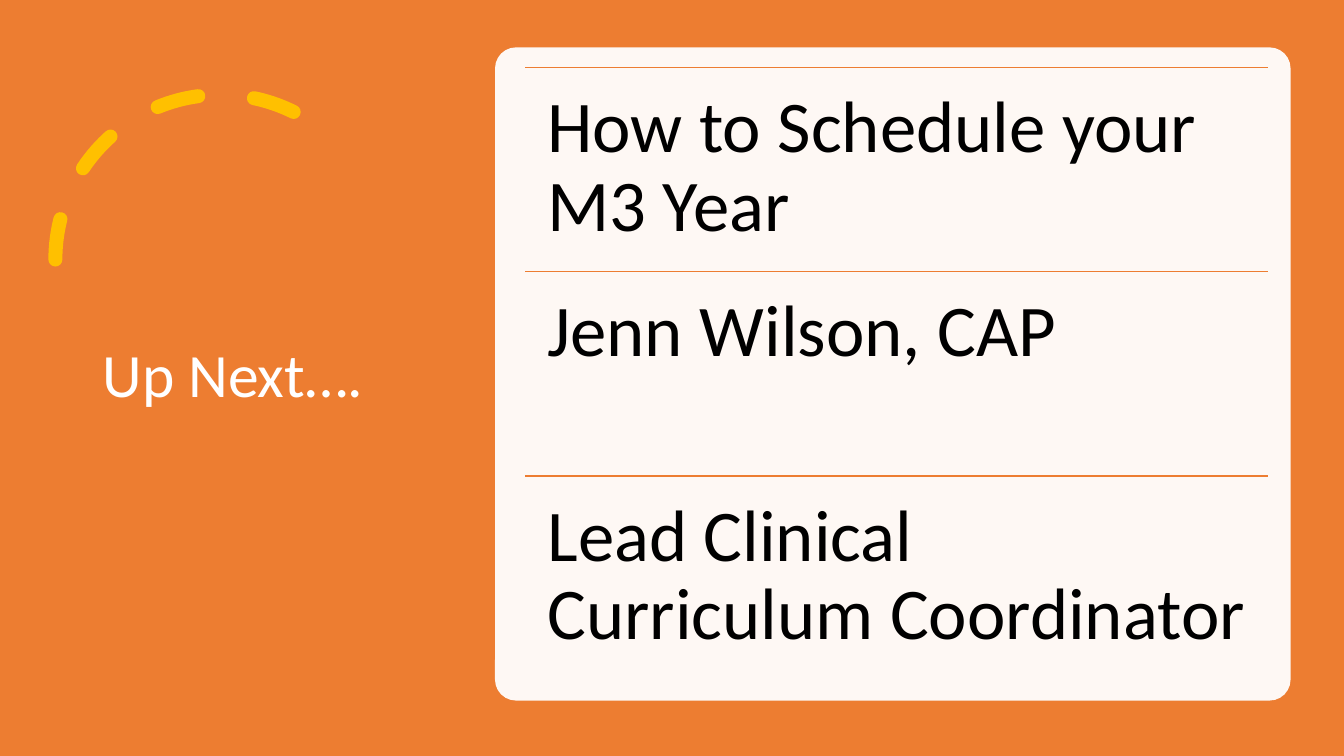
from dataclasses import dataclass
from lxml.etree import SubElement
from pptx import Presentation
from pptx.dml.color import RGBColor as RGB
from pptx.enum.dml import MSO_LINE as Dash
from pptx.enum.shapes import MSO_CONNECTOR as Conn, MSO_SHAPE as Kind
from pptx.enum.text import MSO_ANCHOR as Anchor
from pptx.oxml.ns import qn
from pptx.util import Inches, Pt


@dataclass(frozen=True)
class Theme:
    orange: RGB = RGB(0xED, 0x7D, 0x31)
    gold: RGB = RGB(0xFF, 0xC0, 0x00)
    white: RGB = RGB(0xFF, 0xFF, 0xFF)
    black: RGB = RGB(0, 0, 0)
    font: str = "Calibri"
    title: int = 44
    body: int = 52


THEME = Theme()
WIDTH, HEIGHT = 13.33, 7.5
ITEMS = [
    "How to Schedule your M3 Year",
    "Jenn Wilson, CAP",
    "Lead Clinical Curriculum Coordinator",
]


def add_panel(slide, kind, box, color):
    """Add a filled shape without outline or shadow."""
    panel = slide.shapes.add_shape(kind, *map(Inches, box))
    panel.shadow.inherit = False
    panel.fill.solid()
    panel.fill.fore_color.rgb = color
    panel.line.fill.background()
    return panel


def add_text(slide, box, text, size, color, anchor, inset=(0.1, 0.05)):
    """Add one wrapped paragraph; inset is (sides, top and bottom)."""
    frame = slide.shapes.add_textbox(*map(Inches, box)).text_frame
    frame.word_wrap = True
    frame.vertical_anchor = anchor
    frame.margin_left = frame.margin_right = Inches(inset[0])
    frame.margin_top = frame.margin_bottom = Inches(inset[1])
    para = frame.paragraphs[0]
    para.line_spacing = 0.9
    run = para.add_run()
    run.text = text
    run.font.name = THEME.font
    run.font.size = Pt(size)
    run.font.color.rgb = color


def add_arc(slide, box):
    """Add the dashed arc, mirrored left to right."""
    arc = slide.shapes.add_shape(Kind.ARC, *map(Inches, box))
    arc.shadow.inherit = False
    arc.adjustments[0] = 146.13
    arc.adjustments[1] = 0
    arc.fill.background()
    arc.line.color.rgb = THEME.gold
    arc.line.width = Pt(10)
    arc.line.dash_style = Dash.DASH
    props = arc._element.spPr
    props.find(qn("a:xfrm")).set("flipH", "1")
    props.find(qn("a:ln")).set("cap", "rnd")


def add_rule(slide, left, top, width):
    rule = slide.shapes.add_connector(
        Conn.STRAIGHT, Inches(left), Inches(top),
        Inches(left + width), Inches(top))
    rule.line.color.rgb = THEME.orange
    rule.line.width = Pt(1)
    SubElement(rule._element.spPr, qn("a:effectLst"))


def add_card(slide, box):
    """Add the pale card and its ruled rows of equal height."""
    card = add_panel(slide, Kind.ROUNDED_RECTANGLE, box, THEME.white)
    card.adjustments[0] = 0.032
    fill = card._element.spPr.find(qn("a:solidFill"))
    SubElement(fill[0], qn("a:alpha")).set("val", "95000")

    left, top, width, height = box
    left, top, width = left + 0.3, top + 0.2, width - 0.52
    row = (height - 0.4) / len(ITEMS)
    for i, item in enumerate(ITEMS):
        y = top + i * row
        add_rule(slide, left, y, width)
        add_text(slide, (left, y, width, row), item, THEME.body,
                 THEME.black, Anchor.TOP, (0.22, 0.22))


def main():
    deck = Presentation()
    deck.slide_width, deck.slide_height = Inches(WIDTH), Inches(HEIGHT)
    slide = deck.slides.add_slide(deck.slide_layouts[6])
    add_panel(slide, Kind.RECTANGLE, (0, 0, WIDTH, HEIGHT), THEME.orange)
    add_arc(slide, (0.55, 0.94, 3.27, 3.27))
    add_text(slide, (0.92, 0.7, 3.23, 6.09), "Up Next….", THEME.title,
             THEME.white, Anchor.MIDDLE)
    add_card(slide, (4.91, 0.47, 7.89, 6.48))
    deck.save("out.pptx")


if __name__ == "__main__":
    main()
